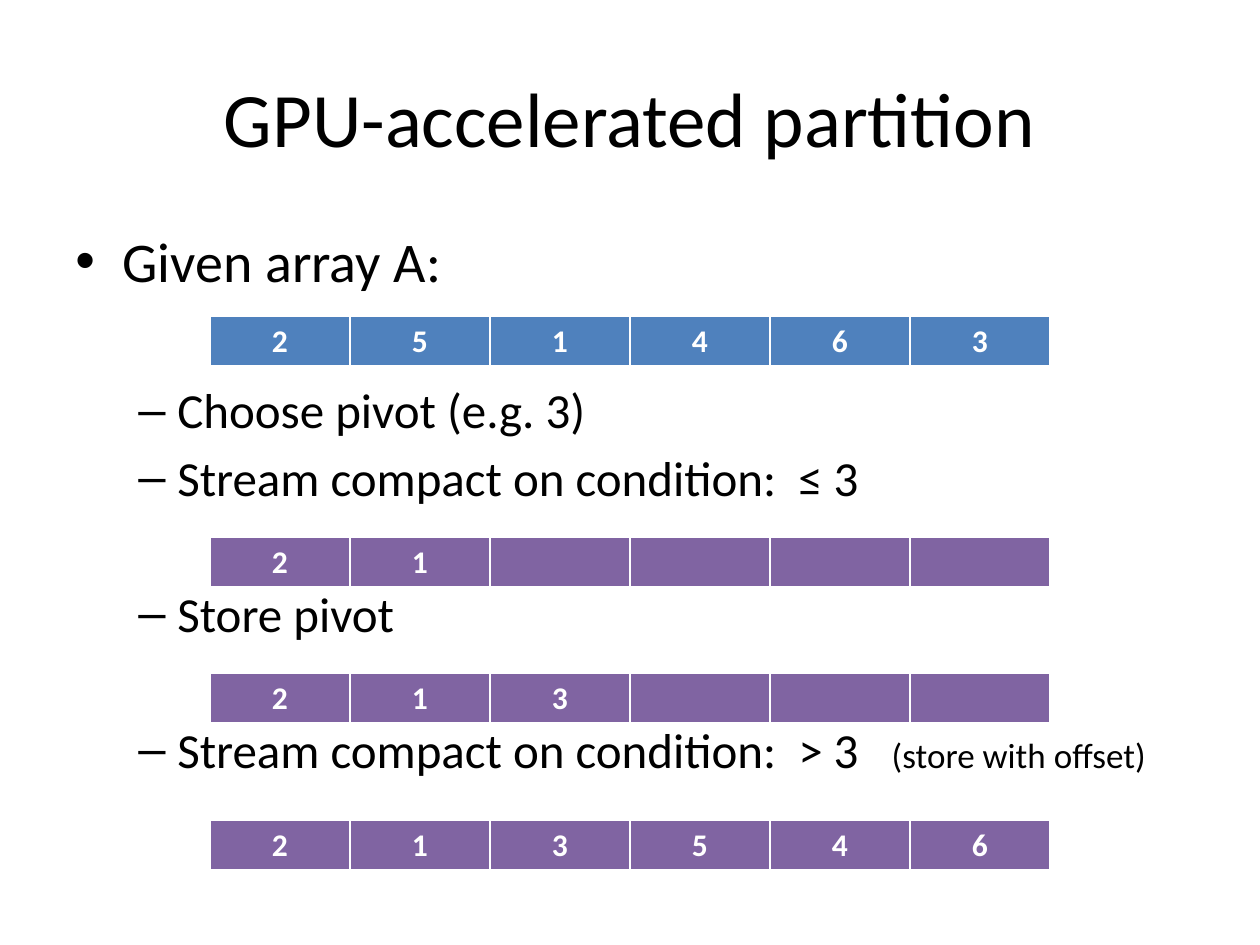
from lxml.etree import SubElement
from pptx import Presentation
from pptx.dml.color import RGBColor
from pptx.enum.text import MSO_ANCHOR, PP_ALIGN
from pptx.oxml.ns import qn
from pptx.util import Emu, Pt

PX_PER_INCH = 126
FONT = "Calibri"
BLACK = RGBColor(0x00, 0x00, 0x00)
WHITE = RGBColor(0xFF, 0xFF, 0xFF)
BLUE = RGBColor(0x4F, 0x81, 0xBD)
PURPLE = RGBColor(0x80, 0x64, 0xA2)

# Bullet character, left margin and hanging indent (px) for each level
BULLETS = [("•", 47, 47), ("–", 102, 39)]

# Level, space before (pt), runs of (text, size); wide spaces leave room for an array
STEPS = [
    (0, 0, [("Given array A:", 32)]),
    (1, 49.5, [("Choose pivot (e.g. 3)", 28)]),
    (1, 5, [("Stream compact on condition:  ≤ 3", 28)]),
    (1, 44, [("Store pivot", 28)]),
    (1, 44, [("Stream compact on condition:  > 3   ", 28), ("(store with offset)", 20)]),
]

CELL_COUNT = 6
# Top (px), values, fill
ARRAYS = [
    (316, [2, 5, 1, 4, 6, 3], BLUE),
    (537, [2, 1], PURPLE),
    (673, [2, 1, 3], PURPLE),
    (820, [2, 1, 3, 5, 4, 6], PURPLE),
]


def px(length):
    return Emu(round(length * 914400 / PX_PER_INCH))


def place(shape, left, top, width, height):
    shape.left, shape.top = px(left), px(top)
    shape.width, shape.height = px(width), px(height)


def add_run(paragraph, text, size, color, bold=False):
    run = paragraph.add_run()
    run.text = text
    run.font.name = FONT
    run.font.size = Pt(size)
    run.font.bold = bold
    run.font.color.rgb = color


def add_title(slide, text, left, top, width, height):
    title = slide.shapes.title
    place(title, left, top, width, height)
    title.text_frame.vertical_anchor = MSO_ANCHOR.MIDDLE
    paragraph = title.text_frame.paragraphs[0]
    paragraph.alignment = PP_ALIGN.CENTER
    add_run(paragraph, text, 44, BLACK)


def set_bullet(paragraph, level):
    character, margin, hanging = BULLETS[level]
    paragraph.level = level
    properties = paragraph._p.get_or_add_pPr()
    properties.set("marL", str(px(margin)))
    properties.set("indent", str(-px(hanging)))
    SubElement(properties, qn("a:buFont"), typeface="Arial")
    SubElement(properties, qn("a:buChar"), char=character)


def add_steps(slide, steps, left, top, width, height):
    box = slide.shapes.add_textbox(px(left), px(top), px(width), px(height))
    frame = box.text_frame
    frame.word_wrap = True
    for index, (level, space, runs) in enumerate(steps):
        paragraph = frame.add_paragraph() if index else frame.paragraphs[0]
        paragraph.space_before = Pt(space)
        set_bullet(paragraph, level)
        for text, size in runs:
            add_run(paragraph, text, size, BLACK)


def set_borders(cell):
    properties = cell._tc.get_or_add_tcPr()
    for side, points in (("L", 1), ("R", 1), ("T", 1), ("B", 3)):
        line = SubElement(properties, qn(f"a:ln{side}"), w=str(Pt(points)))
        fill = SubElement(line, qn("a:solidFill"))
        SubElement(fill, qn("a:srgbClr"), val=str(WHITE))


def add_array(slide, values, color, left, top, width, height):
    """Draw the values from the left; the remaining cells stay empty."""
    table = slide.shapes.add_table(
        1, CELL_COUNT, px(left), px(top), px(width), px(height)
    ).table
    for column in table.columns:
        column.width = px(width // CELL_COUNT)
    for cell in table.iter_cells():
        set_borders(cell)
        cell.fill.solid()
        cell.fill.fore_color.rgb = color
    for index, value in enumerate(values):
        paragraph = table.cell(0, index).text_frame.paragraphs[0]
        paragraph.alignment = PP_ALIGN.CENTER
        add_run(paragraph, str(value), 18, WHITE, bold=True)


def main():
    presentation = Presentation()
    presentation.slide_width, presentation.slide_height = px(1260), px(945)
    slide = presentation.slides.add_slide(presentation.slide_layouts[5])
    add_title(slide, "GPU-accelerated partition", 63, 38, 1134, 157)
    add_steps(slide, STEPS, 63, 220, 1134, 756)
    for top, values, color in ARRAYS:
        add_array(slide, values, color, 210, top, 840, 51)
    presentation.save("out.pptx")


if __name__ == "__main__":
    main()
